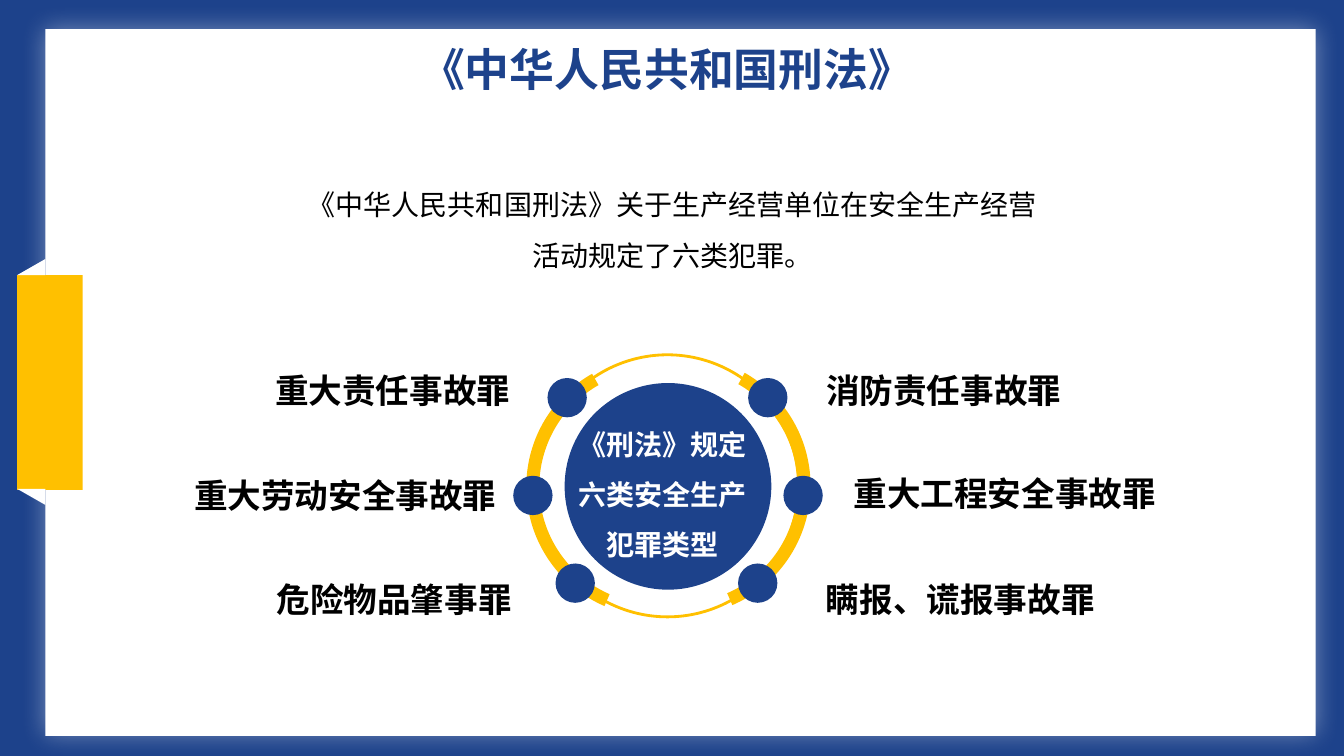
from lxml import etree
from pptx import Presentation
from pptx.dml.color import RGBColor
from pptx.enum.shapes import MSO_SHAPE
from pptx.enum.text import MSO_ANCHOR, MSO_AUTO_SIZE, PP_ALIGN
from pptx.oxml.ns import qn
from pptx.util import Pt

RECT = MSO_SHAPE.RECTANGLE
OVAL = MSO_SHAPE.OVAL
CORNER = MSO_SHAPE.RIGHT_TRIANGLE
ARC = MSO_SHAPE.BLOCK_ARC
CENTER = PP_ALIGN.CENTER
MIDDLE = MSO_ANCHOR.MIDDLE
NO_FIT = MSO_AUTO_SIZE.NONE

EMU_PER_PX = 9144
TITLE_ONLY = 5
BLUE, GOLD, WHITE, BLACK = "1D428B", "FFC000", "FFFFFF", "000000"
FONT = "Noto Sans CJK SC"


def px(length):
    return length * EMU_PER_PX


def color(value):
    return RGBColor.from_string(value)


class LawSlide:
    def __init__(self, deck):
        self.slide = deck.slides.add_slide(deck.slide_layouts[TITLE_ONLY])
        background = self.slide.background.fill
        background.solid()
        background.fore_color.rgb = color(BLUE)

    def shape(self, kind, box, fill=None, line=None, flip="", rotation=0):
        figure = self.slide.shapes.add_shape(kind, *map(px, box))
        figure.shadow.inherit = False
        if fill:
            figure.fill.solid()
            figure.fill.fore_color.rgb = color(fill)
        else:
            figure.fill.background()
        if line:
            figure.line.color.rgb = color(line)
            figure.line.width = Pt(2)
        else:
            figure.line.fill.background()
        for axis in flip:
            figure._element.spPr.xfrm.set("flip" + axis, "1")
        figure.rotation = rotation
        return figure

    def glow(self, figure, tint):
        effects = figure._element.spPr.find(qn("a:effectLst"))
        shadow = etree.SubElement(effects, qn("a:outerShdw"), blurRad=str(Pt(18)),
                                  dist="0", algn="ctr", rotWithShape="0")
        shade = etree.SubElement(shadow, qn("a:srgbClr"), val=tint)
        etree.SubElement(shade, qn("a:alpha"), val="40000")

    def arc(self, box, rotation, flip=""):
        band = self.shape(ARC, box, GOLD, flip=flip, rotation=rotation)
        for index, value in enumerate((108, 184.14, 0.05)):
            band.adjustments[index] = value

    def fill_text(self, holder, text, size, tint, bold, spacing, wrap):
        frame = holder.text_frame
        frame.text = text
        frame.word_wrap = wrap
        frame.auto_size = NO_FIT
        frame.vertical_anchor = MIDDLE
        for paragraph in frame.paragraphs:
            paragraph.alignment = CENTER
            paragraph.line_spacing = spacing
            for run in paragraph.runs:
                font = run.font
                font.name, font.size, font.bold = FONT, Pt(size), bold
                font.color.rgb = color(tint)
                etree.SubElement(run._r.get_or_add_rPr(), qn("a:ea"), typeface=FONT)

    def text(self, box, text, size, tint=BLACK, bold=True, spacing=1.0, wrap=False):
        holder = self.slide.shapes.add_textbox(*map(px, box))
        self.fill_text(holder, text, size, tint, bold, spacing, wrap)

    def title(self, box, text):
        heading = self.slide.shapes.title
        heading.left, heading.top, heading.width, heading.height = map(px, box)
        self.fill_text(heading, text, 32, BLUE, True, 1.0, True)
        self.slide.shapes._spTree.append(heading._element)


def main():
    deck = Presentation()
    deck.slide_width, deck.slide_height = px(1333), px(750)
    law = LawSlide(deck)

    panel = law.shape(RECT, (45, 29, 1260, 701), WHITE)
    law.glow(panel, WHITE)
    law.shape(RECT, (17, 273, 65, 213), GOLD)
    law.shape(CORNER, (17, 257, 28, 16), WHITE, flip="H")
    law.shape(CORNER, (17, 485, 28, 16), WHITE, flip="HV")

    law.shape(OVAL, (560, 380, 205, 205), BLUE)
    law.shape(OVAL, (532, 352, 260, 260), line=GOLD)
    law.arc((522, 354, 258, 258), 293.5)
    law.arc((546, 353, 258, 258), 66.5, "H")

    for top, left, right in ((375, 543, 742), (472, 509, 777), (559, 551, 732)):
        for node_left in (left, right):
            law.shape(OVAL, (node_left, top, 39, 39), BLUE)

    crimes = (
        ("重大责任事故罪", 257, 362, 265),
        ("重大劳动安全事故罪", 176, 466, 333),
        ("危险物品肇事罪", 258, 569, 266),
        ("消防责任事故罪", 808, 362, 256),
        ("重大工程安全事故罪", 830, 464, 333),
        ("瞒报、谎报事故罪", 808, 569, 289),
    )
    for crime, left, top, width in crimes:
        law.text((left, top, width, 50), crime, 24)

    law.text((289, 167, 756, 105),
             "《中华人民共和国刑法》关于生产经营单位在安全生产经营活动规定了六类犯罪。",
             20, bold=False, spacing=1.5, wrap=True)
    law.text((563, 401, 188, 162), "《刑法》规定\n六类安全生产\n犯罪类型",
             20, WHITE, spacing=1.5)
    law.title((398, 36, 527, 64), "《中华人民共和国刑法》")
    deck.save("out.pptx")


if __name__ == "__main__":
    main()
